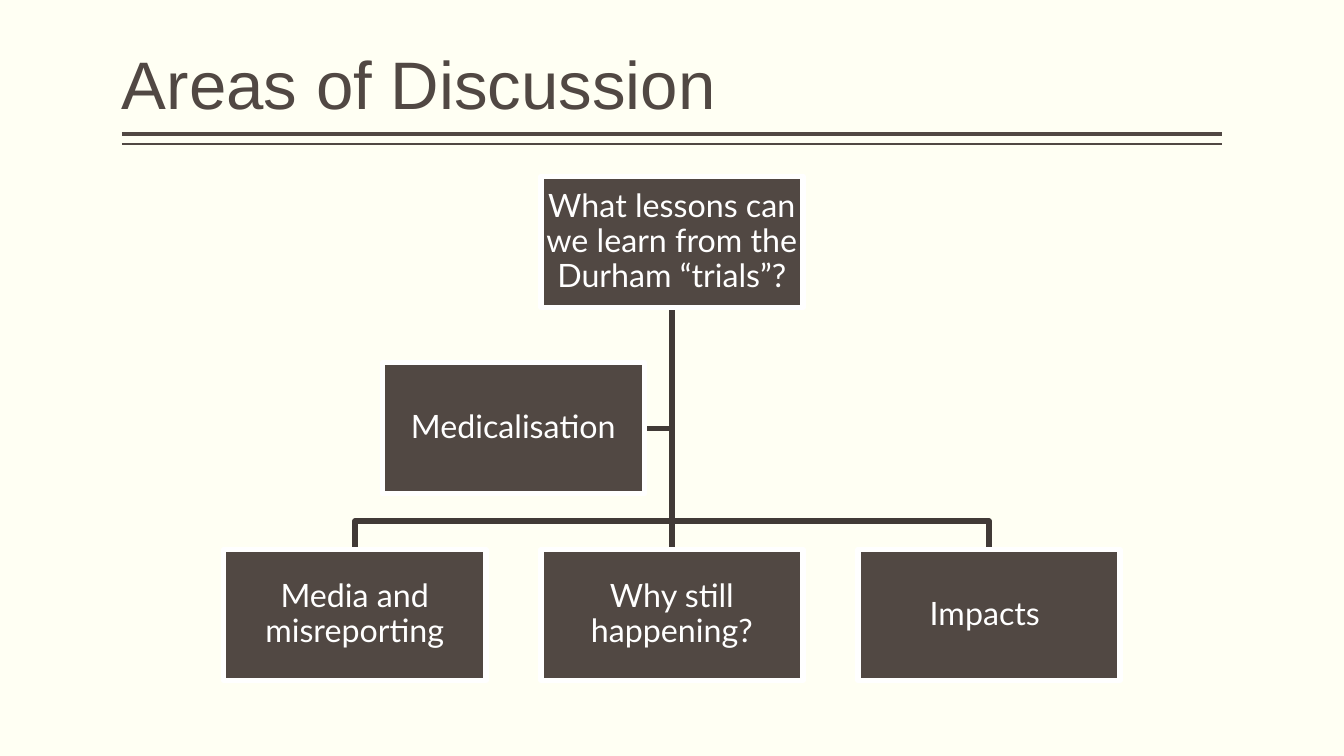
from dataclasses import dataclass

from lxml import etree
from pptx import Presentation
from pptx.dml.color import RGBColor
from pptx.enum.shapes import MSO_CONNECTOR, MSO_SHAPE
from pptx.enum.text import MSO_ANCHOR, MSO_AUTO_SIZE, PP_ALIGN
from pptx.oxml.ns import qn
from pptx.util import Inches, Pt

RECTANGLE = MSO_SHAPE.RECTANGLE
STRAIGHT = MSO_CONNECTOR.STRAIGHT
LEFT, CENTER = PP_ALIGN.LEFT, PP_ALIGN.CENTER
BOTTOM, MIDDLE = MSO_ANCHOR.BOTTOM, MSO_ANCHOR.MIDDLE

# Content: each box has a text, a column offset from the centre and a row
TITLE = "Areas of Discussion"
ROOT = ("What lessons can we learn from the Durham “trials”?", 0, 0)
ASSISTANT = ("Medicalisation", -0.5, 1)
CHILDREN = [
    ("Media and misreporting", -1, 2),
    ("Why still happening?", 0, 2),
    ("Impacts ", 1, 2),
]


@dataclass(frozen=True)
class Theme:
    page: RGBColor = RGBColor.from_string("FFFFF3")
    brown: RGBColor = RGBColor.from_string("514843")
    branch: RGBColor = RGBColor.from_string("413A36")
    white: RGBColor = RGBColor.from_string("FFFFFF")
    title_font: str = "Arial"
    box_font: str = "Lato"
    title_size: float = 48
    box_size: float = 23
    stroke: float = 3.78


THEME = Theme()

# Grid, in inches
WIDTH, HEIGHT = 13.33, 7.5
MIDLINE = WIDTH / 2
MARGIN = 1.21
COLUMN, ROW = 3.145, 1.85
BOX_WIDTH, BOX_HEIGHT = 2.6, 1.3
FIRST_TOP = 1.75
BUS_GAP = 0.28
RULES = [(1.33, 3), (1.43, 1)]


def center_x(column):
    return MIDLINE + column * COLUMN


def top_y(row):
    return FIRST_TOP + row * ROW


def write(shape, text, font, size, color, align, anchor, insets):
    frame = shape.text_frame
    frame.word_wrap = True
    frame.auto_size = MSO_AUTO_SIZE.NONE
    frame.vertical_anchor = anchor
    frame.margin_left = frame.margin_right = Inches(insets[0])
    frame.margin_top = frame.margin_bottom = Inches(insets[1])
    para = frame.paragraphs[0]
    para.alignment = align
    para.line_spacing = 0.9
    span = para.add_run()
    span.text = text
    span.font.name = font
    span.font.size = Pt(size)
    span.font.color.rgb = color


def add_line(page, start, end, color, weight):
    line = page.shapes.add_connector(STRAIGHT, *map(Inches, start + end))
    line.line.color.rgb = color
    line.line.width = Pt(weight)
    etree.SubElement(line._element.spPr, qn("a:effectLst"))


def add_branch(page, points):
    """Draw a straight branch as a connector, a bent one as an open outline."""
    if len(points) == 2:
        add_line(page, *points, THEME.branch, THEME.stroke)
        return
    corners = [tuple(map(Inches, point)) for point in points]
    builder = page.shapes.build_freeform(*corners[0])
    builder.add_line_segments(corners[1:], close=False)
    branch = builder.convert_to_shape()
    branch.shadow.inherit = False
    branch.fill.background()
    branch.line.color.rgb = THEME.branch
    branch.line.width = Pt(THEME.stroke)


def add_box(page, text, column, row):
    box = page.shapes.add_shape(
        RECTANGLE, Inches(center_x(column) - BOX_WIDTH / 2), Inches(top_y(row)),
        Inches(BOX_WIDTH), Inches(BOX_HEIGHT))
    box.shadow.inherit = False
    box.fill.solid()
    box.fill.fore_color.rgb = THEME.brown
    box.line.color.rgb = THEME.white
    box.line.width = Pt(THEME.stroke)
    write(box, text, THEME.box_font, THEME.box_size, THEME.white,
          CENTER, MIDDLE, (0.02, 0.02))


def main():
    deck = Presentation()
    deck.slide_width, deck.slide_height = Inches(WIDTH), Inches(HEIGHT)
    page = deck.slides.add_slide(deck.slide_layouts[5])
    page.background.fill.solid()
    page.background.fill.fore_color.rgb = THEME.page

    # Title and the double rule under it
    title = page.shapes.title
    title.left, title.top = Inches(MARGIN), Inches(0.08)
    title.width, title.height = Inches(WIDTH - 2 * MARGIN), Inches(1.2)
    write(title, TITLE, THEME.title_font, THEME.title_size, THEME.brown,
          LEFT, BOTTOM, (0, 0.05))
    for y, weight in RULES:
        add_line(page, (MARGIN, y), (WIDTH - MARGIN, y), THEME.brown, weight)

    # Branches from the root box
    trunk = (MIDLINE, FIRST_TOP + BOX_HEIGHT)
    side_y = top_y(ASSISTANT[2]) + BOX_HEIGHT / 2
    side_x = center_x(ASSISTANT[1]) + BOX_WIDTH / 2
    add_branch(page, [trunk, (MIDLINE, side_y), (side_x, side_y)])
    for _, column, row in CHILDREN:
        x, y = center_x(column), top_y(row)
        bend = [(MIDLINE, y - BUS_GAP), (x, y - BUS_GAP)] if column else []
        add_branch(page, [trunk, *bend, (x, y)])

    # Boxes
    for text, column, row in [ROOT, *CHILDREN, ASSISTANT]:
        add_box(page, text, column, row)

    deck.save("out.pptx")


if __name__ == "__main__":
    main()
